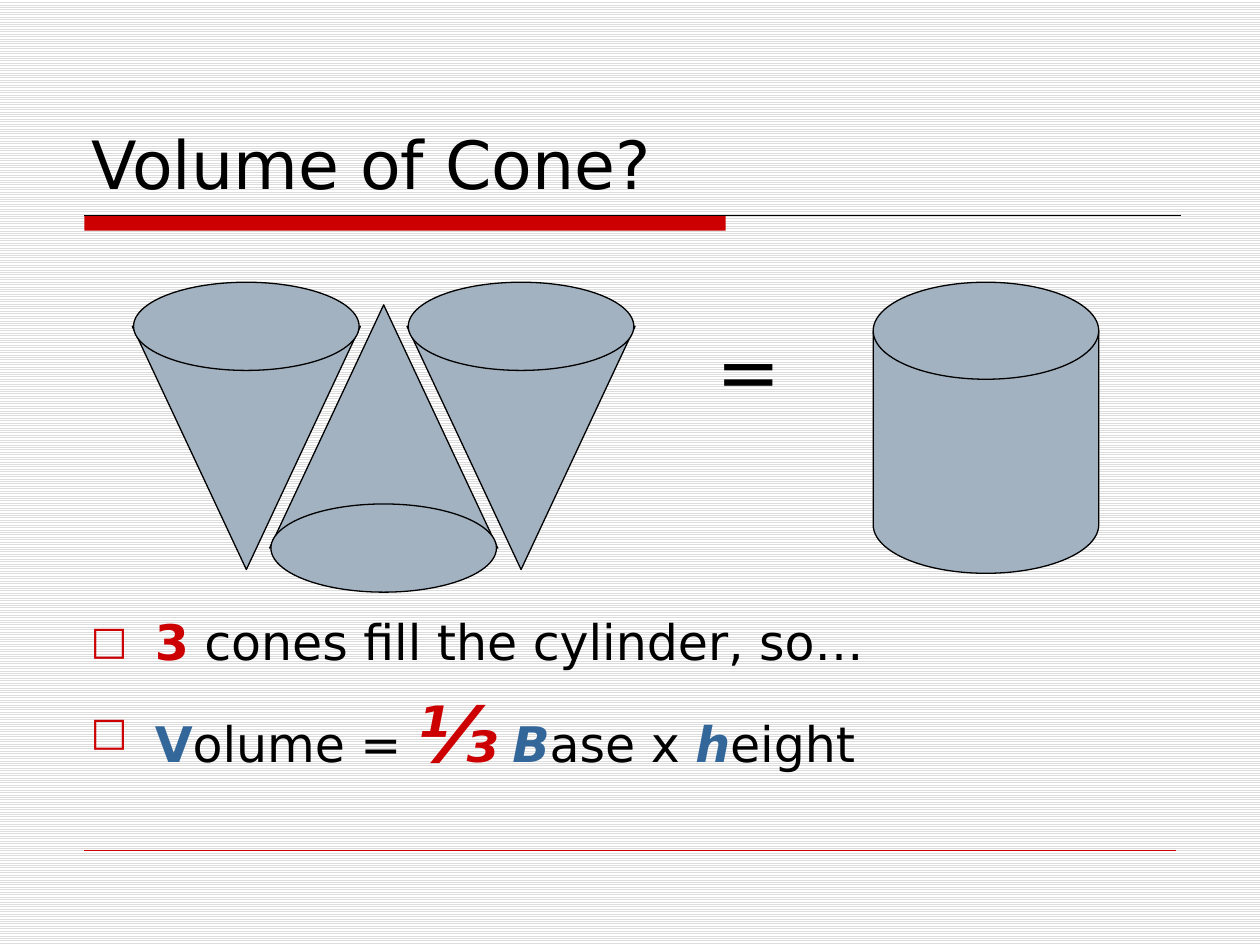
from lxml import etree
from pptx import Presentation
from pptx.dml.color import RGBColor
from pptx.enum.dml import MSO_PATTERN
from pptx.enum.shapes import MSO_CONNECTOR, MSO_SHAPE
from pptx.enum.text import MSO_ANCHOR, MSO_AUTO_SIZE, PP_ALIGN
from pptx.oxml.ns import qn
from pptx.util import Inches, Pt

FONT = "DejaVu Sans"
COLORS = {
    "black": "000000",
    "red": "CC0000",
    "blue": "336699",
    "solid": "A3B2C1",
    "stripe": "DDDDDD",
    "paper": "FFFFFF",
}
TITLE = "Volume of Cone?"
BULLETS = [
    [("3", 28, "red", True, False),
     (" cones fill the cylinder, so…", 28, "black", False, False)],
    [("V", 28, "blue", True, False),
     ("olume = ", 28, "black", False, False),
     ("⅓", 44, "red", True, True),
     (" ", 28, "black", False, False),
     ("B", 28, "blue", True, True),
     ("ase x ", 28, "black", False, False),
     ("h", 28, "blue", True, True),
     ("eight", 28, "black", False, False)],
]
CONES = [(3.23, True), (1.05, True), (2.14, False)]
CONE_WIDTH, CONE_HEIGHT = 1.81, 1.93
BASE_WIDTH, BASE_HEIGHT = 1.79, 0.7


def color(name):
    return RGBColor.from_string(COLORS[name])


def add_solid(slide, kind, left, top, width, height, fill="solid", outlined=True):
    solid = slide.shapes.add_shape(
        kind, Inches(left), Inches(top), Inches(width), Inches(height))
    solid.shadow.inherit = False
    solid.fill.solid()
    solid.fill.fore_color.rgb = color(fill)
    if outlined:
        solid.line.color.rgb = color("black")
        solid.line.width = Pt(0.75)
    else:
        solid.line.fill.background()
    return solid


def add_rule(slide, left, right, y, name, width):
    rule = slide.shapes.add_connector(
        MSO_CONNECTOR.STRAIGHT, Inches(left), Inches(y), Inches(right), Inches(y))
    rule.line.color.rgb = color(name)
    rule.line.width = Pt(width)
    etree.SubElement(rule._element.spPr, qn("a:effectLst"))


def add_run(paragraph, text, size, name, bold=False, italic=False):
    run = paragraph.add_run()
    run.text = text
    run.font.name = FONT
    run.font.size = Pt(size)
    run.font.color.rgb = color(name)
    run.font.bold = bold
    run.font.italic = italic


def add_bullet(paragraph):
    props = paragraph._p.get_or_add_pPr()
    props.set("marL", str(Inches(0.51)))
    props.set("indent", str(-Inches(0.51)))
    spacing = etree.SubElement(props, qn("a:spcBef"))
    etree.SubElement(spacing, qn("a:spcPct"), val="20000")
    tint = etree.SubElement(props, qn("a:buClr"))
    etree.SubElement(tint, qn("a:srgbClr"), val=COLORS["red"])
    etree.SubElement(props, qn("a:buSzPct"), val="80000")
    etree.SubElement(props, qn("a:buFont"), typeface=FONT)
    etree.SubElement(props, qn("a:buChar"), char="□")


def add_cone(slide, left, inverted):
    top = 2.59 if inverted else 2.42
    body = add_solid(slide, MSO_SHAPE.ISOSCELES_TRIANGLE,
                     left, top, CONE_WIDTH, CONE_HEIGHT)
    body.rotation = 180 if inverted else 0
    base_center = top if inverted else top + CONE_HEIGHT
    add_solid(slide, MSO_SHAPE.OVAL, left + (CONE_WIDTH - BASE_WIDTH) / 2,
              base_center - BASE_HEIGHT / 2, BASE_WIDTH, BASE_HEIGHT)


def main():
    deck = Presentation()
    deck.slide_width, deck.slide_height = Inches(10), Inches(7.5)
    slide = deck.slides.add_slide(deck.slide_layouts[5])

    backdrop = slide.background.fill
    backdrop.patterned()
    backdrop.pattern = MSO_PATTERN.LIGHT_HORIZONTAL
    backdrop.fore_color.rgb = color("stripe")
    backdrop.back_color.rgb = color("paper")

    add_solid(slide, MSO_SHAPE.RECTANGLE, 0.67, 1.71, 5.09, 0.12, "red", False)
    add_rule(slide, 0.67, 9.37, 1.71, "black", 0.75)
    add_rule(slide, 0.67, 9.33, 6.75, "red", 0.25)

    title = slide.shapes.title
    title.left, title.top = Inches(0.63), Inches(0.33)
    title.width, title.height = Inches(8.75), Inches(1.33)
    title.text_frame.auto_size = MSO_AUTO_SIZE.NONE
    title.text_frame.vertical_anchor = MSO_ANCHOR.BOTTOM
    heading = title.text_frame.paragraphs[0]
    heading.alignment = PP_ALIGN.LEFT
    add_run(heading, TITLE, 38, "black")

    formula = slide.shapes.add_textbox(
        Inches(0.62), Inches(4.8), Inches(6.48), Inches(1.78)).text_frame
    formula.word_wrap = True
    for index, runs in enumerate(BULLETS):
        paragraph = formula.add_paragraph() if index else formula.paragraphs[0]
        add_bullet(paragraph)
        for run in runs:
            add_run(paragraph, *run)

    for left, inverted in CONES:
        add_cone(slide, left, inverted)

    equals = slide.shapes.add_textbox(
        Inches(5.59), Inches(2.51), Inches(0.7), Inches(0.83)).text_frame
    equals.word_wrap = False
    equals.auto_size = MSO_AUTO_SIZE.SHAPE_TO_FIT_TEXT
    add_run(equals.paragraphs[0], "=", 44, "black")

    add_solid(slide, MSO_SHAPE.FLOWCHART_MAGNETIC_DISK, 6.93, 2.24, 1.79, 2.31)
    deck.save("out.pptx")


if __name__ == "__main__":
    main()
